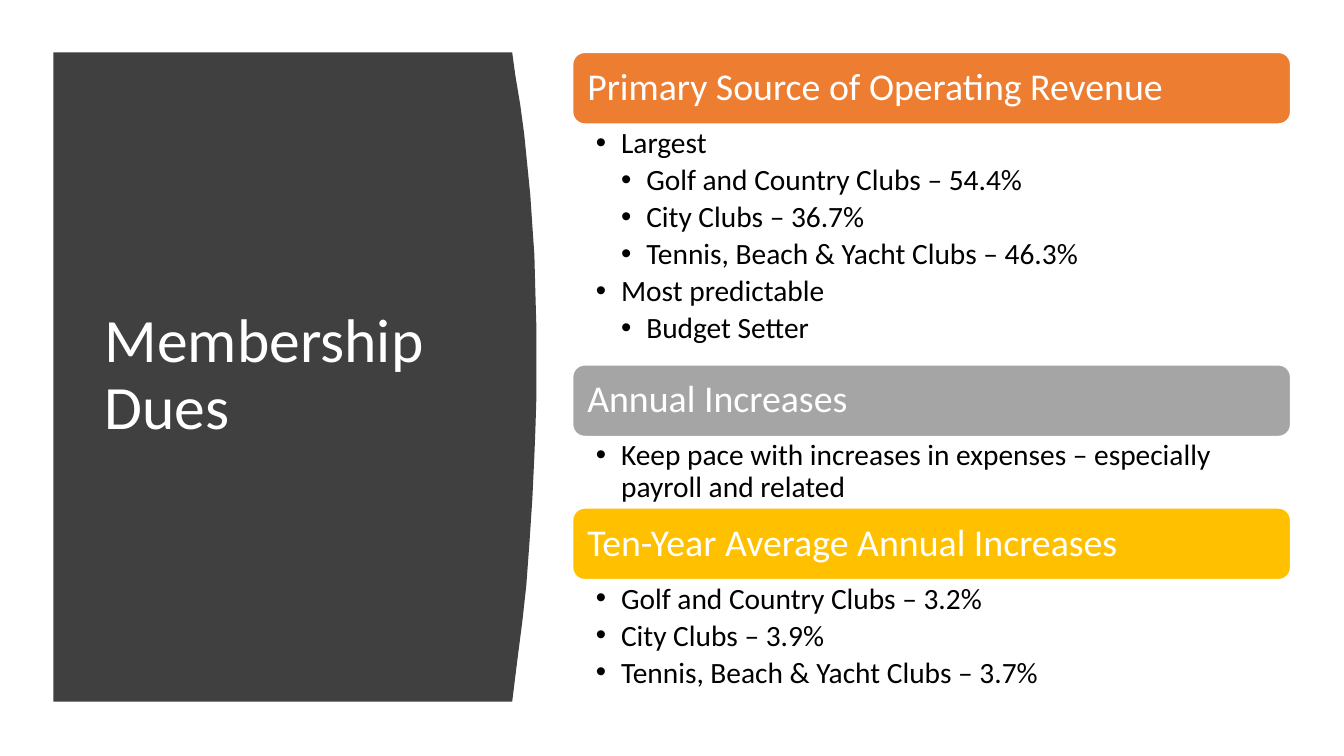
from dataclasses import dataclass

from lxml.etree import SubElement
from pptx import Presentation
from pptx.dml.color import RGBColor
from pptx.enum.shapes import MSO_SHAPE
from pptx.enum.text import MSO_ANCHOR
from pptx.oxml.ns import qn
from pptx.util import Inches, Pt


@dataclass(frozen=True)
class Theme:
    font: str = "Calibri"
    panel: str = "404040"
    light: str = "FFFFFF"
    dark: str = "000000"
    orange: str = "ED7D31"
    gray: str = "A5A5A5"
    gold: str = "FFC000"
    title_size: float = 44
    heading_size: float = 27
    body_size: float = 21


THEME = Theme()
COLUMN_LEFT, COLUMN_WIDTH, HEADING_HEIGHT = 5.68, 7.12, 0.71
BULLET_STEP = 0.25
PANEL_LEFT, PANEL_TOP, PANEL_BOTTOM = 0.53, 0.52, 6.96
PANEL_EDGE = [
    (5.08, PANEL_TOP), (5.11, 0.74), (5.16, 1.04), (5.2, 1.34),
    (5.23, 1.64), (5.26, 1.94), (5.28, 2.24), (5.3, 2.53),
    (5.31, 2.9), (5.32, 3.25), (5.32, 3.94), (5.31, 4.27),
    (5.3, 4.52), (5.28, 4.95), (5.25, 5.4), (5.22, 5.81),
    (5.18, 6.17), (5.14, 6.48), (5.11, 6.72), (5.08, PANEL_BOTTOM),
]
SECTIONS = [
    (0.52, 2.38, THEME.orange, "Primary Source of Operating Revenue", [
        (1, "Largest"),
        (2, "Golf and Country Clubs – 54.4%"),
        (2, "City Clubs – 36.7%"),
        (2, "Tennis, Beach & Yacht Clubs – 46.3%"),
        (1, "Most predictable"),
        (2, "Budget Setter"),
    ]),
    (3.62, 0.72, THEME.gray, "Annual Increases", [
        (1, "Keep pace with increases in expenses – especially payroll and related"),
    ]),
    (5.04, 1.19, THEME.gold, "Ten-Year Average Annual Increases", [
        (1, "Golf and Country Clubs – 3.2%"),
        (1, "City Clubs – 3.9%"),
        (1, "Tennis, Beach & Yacht Clubs – 3.7%"),
    ]),
]


def paint(shape, fill, line=None):
    shape.shadow.inherit = False
    shape.fill.solid()
    shape.fill.fore_color.rgb = RGBColor.from_string(fill)
    if line:
        shape.line.color.rgb = RGBColor.from_string(line)
        shape.line.width = Pt(1)
    else:
        shape.line.fill.background()


def add_bullet(paragraph, level):
    paragraph.level = level - 1
    properties = paragraph._p.get_or_add_pPr()
    properties.set("marL", str(Inches(BULLET_STEP * level)))
    properties.set("indent", str(-Inches(BULLET_STEP)))
    SubElement(properties, qn("a:buFont"), typeface="Arial")
    SubElement(properties, qn("a:buChar"), char="•")


def write_text(shape, items, *, size, color, insets, anchor=MSO_ANCHOR.TOP, space_after=0):
    frame = shape.text_frame
    frame.word_wrap = True
    frame.vertical_anchor = anchor
    frame.margin_left, frame.margin_top, frame.margin_right, frame.margin_bottom = map(Inches, insets)
    for index, (level, text) in enumerate(items):
        paragraph = frame.add_paragraph() if index else frame.paragraphs[0]
        paragraph.line_spacing = 0.9
        paragraph.space_after = Pt(space_after)
        if level:
            add_bullet(paragraph, level)
        else:
            paragraph.alignment = 1
        run = paragraph.add_run()
        run.text = text
        run.font.name = THEME.font
        run.font.size = Pt(size)
        run.font.color.rgb = RGBColor.from_string(color)


def add_panel(slide):
    builder = slide.shapes.build_freeform(Inches(PANEL_LEFT), Inches(PANEL_TOP))
    outline = PANEL_EDGE + [(PANEL_LEFT, PANEL_BOTTOM)]
    builder.add_line_segments([(Inches(x), Inches(y)) for x, y in outline], close=True)
    paint(builder.convert_to_shape(), THEME.panel)


def add_title(slide, text):
    title = slide.shapes.add_textbox(Inches(0.94), Inches(1.11), Inches(3.74), Inches(5.24))
    write_text(title, [(0, text)], size=THEME.title_size, color=THEME.light,
               insets=(0.1, 0.05, 0.1, 0.05), anchor=MSO_ANCHOR.MIDDLE)


def add_section(slide, top, body_height, color, heading, bullets):
    left, width = Inches(COLUMN_LEFT), Inches(COLUMN_WIDTH)
    bar = slide.shapes.add_shape(MSO_SHAPE.ROUNDED_RECTANGLE, left, Inches(top),
                                 width, Inches(HEADING_HEIGHT))
    paint(bar, color, THEME.light)
    write_text(bar, [(0, heading)], size=THEME.heading_size, color=THEME.light,
               insets=(0.11, 0.11, 0.11, 0.11), anchor=MSO_ANCHOR.MIDDLE)
    body = slide.shapes.add_textbox(left, Inches(top + HEADING_HEIGHT), width, Inches(body_height))
    write_text(body, bullets, size=THEME.body_size, color=THEME.dark,
               insets=(0.23, 0.04, 0.21, 0.04), space_after=3.8)


def main():
    presentation = Presentation()
    presentation.slide_width = Inches(13.33)
    presentation.slide_height = Inches(7.5)
    slide = presentation.slides.add_slide(presentation.slide_layouts[6])
    add_panel(slide)
    add_title(slide, "Membership Dues")
    for section in SECTIONS:
        add_section(slide, *section)
    presentation.save("out.pptx")


if __name__ == "__main__":
    main()
